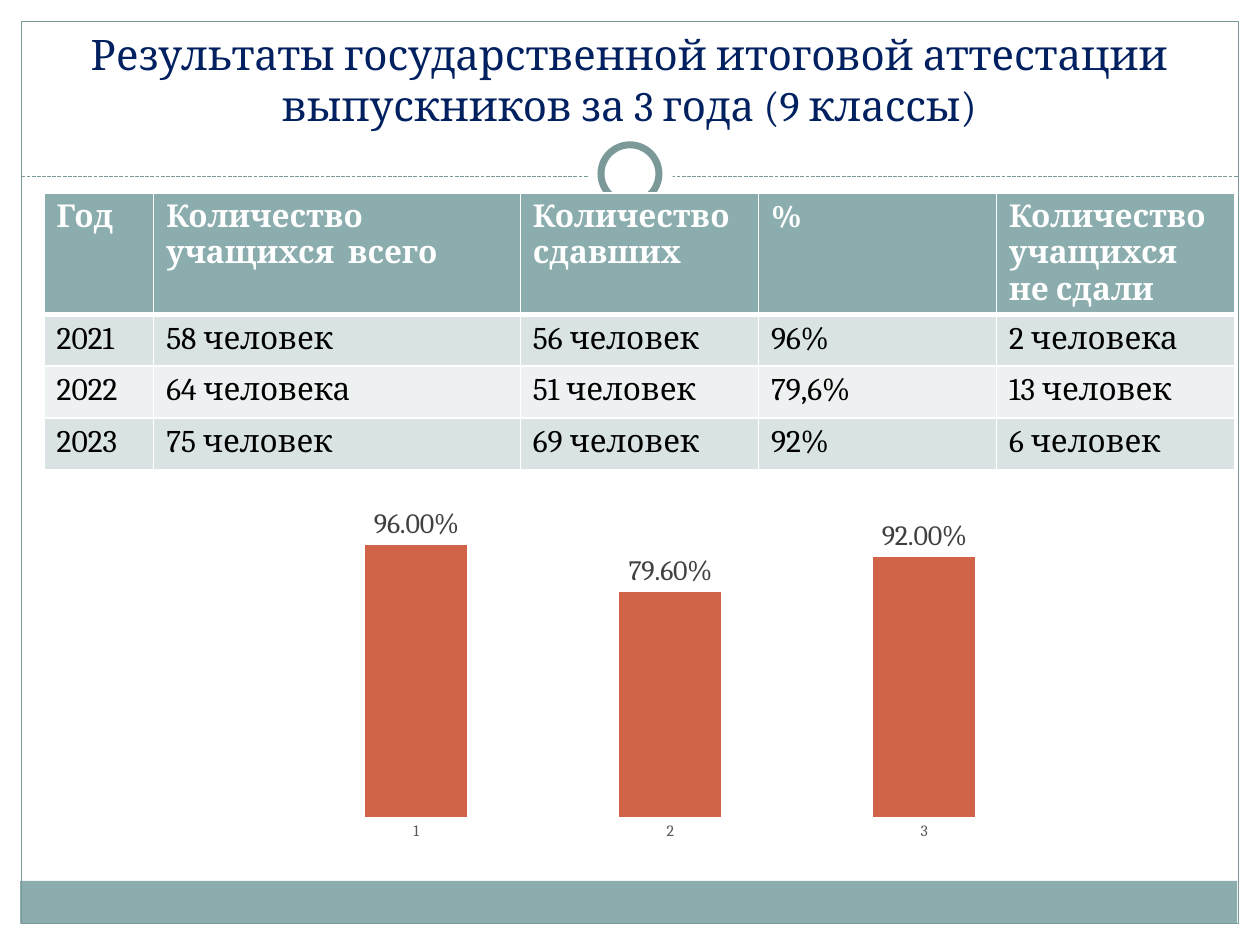
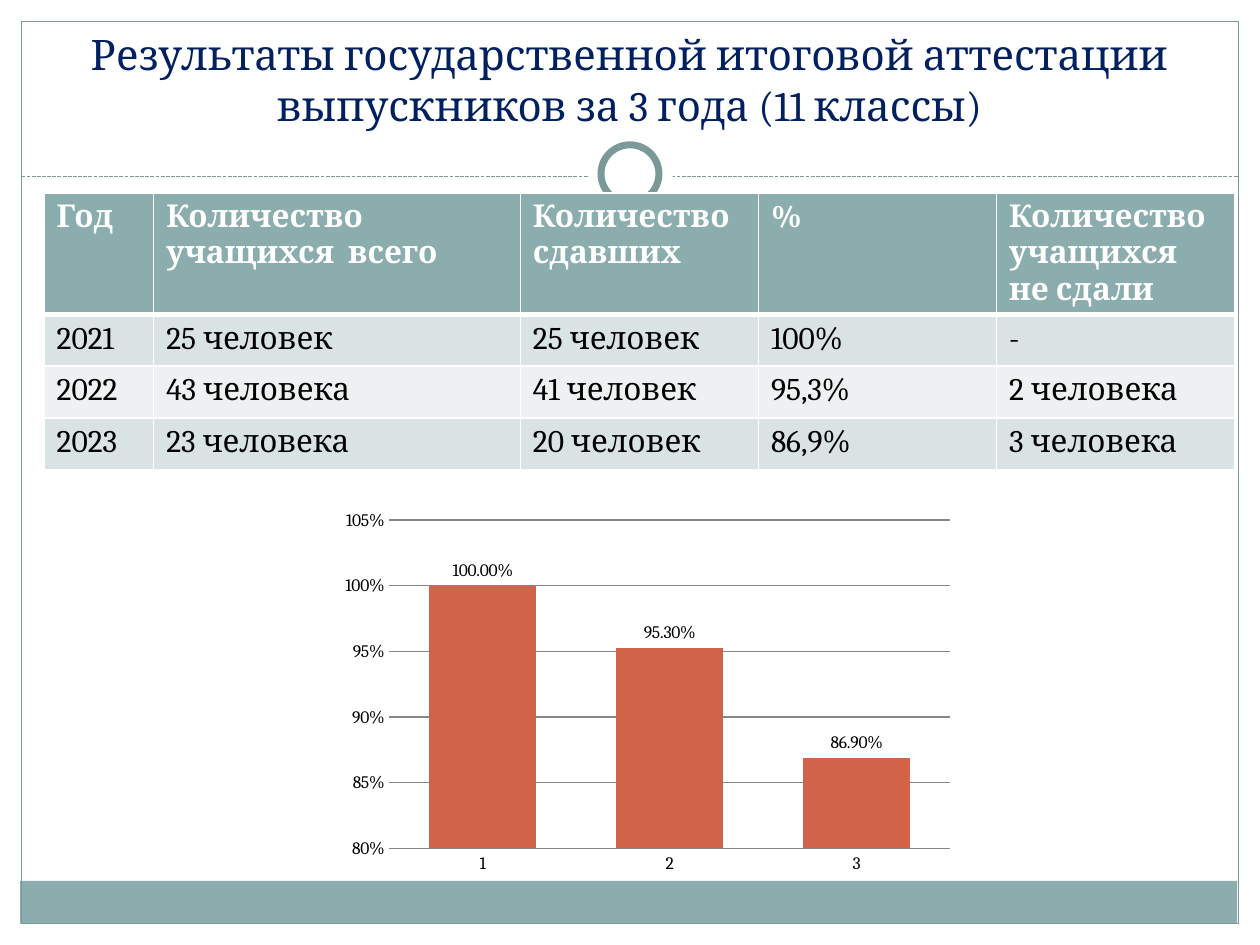
from lxml.etree import SubElement
from pptx import Presentation
from pptx.chart.data import CategoryChartData
from pptx.dml.color import RGBColor
from pptx.enum.chart import XL_CHART_TYPE, XL_LABEL_POSITION, XL_TICK_MARK
from pptx.enum.dml import MSO_LINE
from pptx.enum.shapes import MSO_CONNECTOR, MSO_SHAPE
from pptx.enum.text import MSO_ANCHOR, MSO_AUTO_SIZE, PP_ALIGN
from pptx.oxml import parse_xml
from pptx.oxml.ns import nsdecls, qn
from pptx.util import Inches, Pt

FONT = "Cambria"
WHITE, BLACK, NAVY = "FFFFFF", "000000", "002060"
TEAL, DARK_TEAL, BAR = "8CADAE", "7C999A", "D16349"
BODY_FILLS = ["DAE3E3", "EEF1F2"]
HEADER = ["Год", "Количество учащихся  всего", "Количество сдавших", "%", "Количество учащихся не сдали"]
COLUMN_SHARES = [8.7, 29.1, 18.9, 18.9, 18.9]
ROW_SHARES = [12.8, 5.47, 5.47, 5.47]

REPORTS = [
    {
        "classes": 9,
        "rows": [
            ["2021", "58 человек", "56 человек", "96%", "2 человека"],
            ["2022", "64 человека", "51 человек", "79,6%", "13 человек"],
            ["2023", "75 человек", "69 человек", "92%", "6 человек"],
        ],
        "rates": [0.96, 0.796, 0.92],
        "chart_box": (21.7, 49.73, 63, 40),
        "scale": (0, 1.2, 0.2),
        "gap": 150, "overlap": 0, "axis": False,
        "label_size": 16, "label_color": "404040",
        "category_size": 9, "category_color": "595959",
    },
    {
        "classes": 11,
        "rows": [
            ["2021", "25 человек", "25 человек", "100%", "-"],
            ["2022", "43 человека", "41 человек", "95,3%", "2 человека"],
            ["2023", "23 человека", "20 человек", "86,9%", "3 человека"],
        ],
        "rates": [1, 0.953, 0.869],
        "chart_box": (26.4, 53.2, 50, 40),
        "scale": (0.8, 1.05, 0.05),
        "gap": 75, "overlap": -25, "axis": True,
        "label_size": 10, "label_color": BLACK,
        "category_size": 10, "category_color": BLACK,
    },
]

presentation = Presentation()
presentation.slide_width = Inches(10)
presentation.slide_height = Inches(7.5)


def color(value):
    return RGBColor.from_string(value)


def share(*percents):
    sides = (presentation.slide_width, presentation.slide_height)
    return [round(sides[index % 2] * percent / 100) for index, percent in enumerate(percents)]


layout = presentation.slide_layouts[5]
slides = [presentation.slides.add_slide(layout) for report in REPORTS]

divider = slides[0].shapes.add_connector(MSO_CONNECTOR.STRAIGHT, *share(1.7, 18.67, 98.3, 18.67))
divider.line.color.rgb = color(DARK_TEAL)
divider.line.width = Pt(0.75)
divider.line.dash_style = MSO_LINE.SQUARE_DOT
SubElement(divider.element.spPr, qn("a:effectLst"))
decorations = [divider]

for kind, box, fill, line_width in [
    (MSO_SHAPE.RECTANGLE, (1.6, 93.2, 96.6, 4.53), TEAL, 0),
    (MSO_SHAPE.RECTANGLE, (1.7, 2.27, 96.6, 95.47), None, 0.75),
    (MSO_SHAPE.OVAL, (46.7, 14, 6.7, 8.93), WHITE, 0),
    (MSO_SHAPE.OVAL, (47.7, 15.33, 4.6, 6.13), WHITE, 4),
]:
    shape = slides[0].shapes.add_shape(kind, *share(*box))
    shape.shadow.inherit = False
    if fill:
        shape.fill.solid()
        shape.fill.fore_color.rgb = color(fill)
    else:
        shape.fill.background()
    if line_width:
        shape.line.color.rgb = color(DARK_TEAL)
        shape.line.width = Pt(line_width)
    else:
        shape.line.fill.background()
    decorations.append(shape)

for number, shape in enumerate(decorations, 101):
    shape.element.xpath(".//p:cNvPr")[0].set("id", str(number))
    layout.shapes.element.append(shape.element)

for slide, report in zip(slides, REPORTS):
    title = slide.shapes.title
    title.left, title.top, title.width, title.height = share(3.3, 3.33, 93.3, 11.07)
    title.text_frame.text = (
        f"Результаты государственной итоговой аттестации выпускников за 3 года ({report['classes']} классы)"
    )
    title.text_frame.auto_size = MSO_AUTO_SIZE.NONE
    title.text_frame.vertical_anchor = MSO_ANCHOR.BOTTOM
    paragraph = title.text_frame.paragraphs[0]
    paragraph.alignment = PP_ALIGN.CENTER
    font = paragraph.runs[0].font
    font.name, font.size = FONT, Pt(24)
    font.color.rgb = color(NAVY)

    rows = [HEADER] + report["rows"]
    table_box = share(3.5, 20.4, sum(COLUMN_SHARES), sum(ROW_SHARES))
    table = slide.shapes.add_table(len(rows), len(HEADER), *table_box).table
    for column, width in zip(table.columns, COLUMN_SHARES):
        column.width = share(width)[0]
    for row, height in zip(table.rows, ROW_SHARES):
        row.height = share(0, height)[1]
    for row_index, values in enumerate(rows):
        is_header = row_index == 0
        for column_index, value in enumerate(values):
            cell = table.cell(row_index, column_index)
            cell.text_frame.text = value
            font = cell.text_frame.paragraphs[0].runs[0].font
            font.name, font.size, font.bold = FONT, Pt(18), is_header
            font.color.rgb = color(WHITE if is_header else BLACK)
            cell.fill.solid()
            cell.fill.fore_color.rgb = color(TEAL if is_header else BODY_FILLS[(row_index - 1) % 2])
            properties = cell._tc.get_or_add_tcPr()
            for position, side in enumerate("LRTB"):
                under_header = (row_index, side) in [(0, "B"), (1, "T")]
                properties.insert(position, parse_xml(
                    f'<a:ln{side} {nsdecls("a")} w="{Pt(3 if under_header else 1)}">'
                    f'<a:solidFill><a:srgbClr val="{WHITE}"/></a:solidFill></a:ln{side}>'
                ))

    chart_data = CategoryChartData(number_format="0.00%")
    chart_data.categories = ["1", "2", "3"]
    chart_data.add_series("Series 1", report["rates"])
    chart = slide.shapes.add_chart(
        XL_CHART_TYPE.COLUMN_CLUSTERED, *share(*report["chart_box"]), chart_data
    ).chart
    chart.has_legend = False
    chart.has_title = False
    chart.font.name, chart.font.size = FONT, Pt(10)
    chart.font.color.rgb = color(BLACK)

    plot = chart.plots[0]
    plot.vary_by_categories = False
    plot.gap_width, plot.overlap = report["gap"], report["overlap"]
    series = plot.series[0]
    series.format.fill.solid()
    series.format.fill.fore_color.rgb = color(BAR)
    labels = series.data_labels
    labels.show_value = True
    labels.position = XL_LABEL_POSITION.OUTSIDE_END
    labels.number_format, labels.number_format_is_linked = "0.00%", False
    labels.font.name, labels.font.size = FONT, Pt(report["label_size"])
    labels.font.color.rgb = color(report["label_color"])

    category_axis, value_axis = chart.category_axis, chart.value_axis
    category_axis.major_tick_mark = XL_TICK_MARK.NONE
    category_font = category_axis.tick_labels.font
    category_font.name, category_font.size = FONT, Pt(report["category_size"])
    category_font.color.rgb = color(report["category_color"])
    value_axis.minimum_scale, value_axis.maximum_scale, value_axis.major_unit = report["scale"]
    value_axis.major_tick_mark = XL_TICK_MARK.NONE
    value_axis.format.line.fill.background()
    value_axis.visible = value_axis.has_major_gridlines = report["axis"]
    if report["axis"]:
        value_axis.tick_labels.number_format = "0%"
        value_axis.tick_labels.number_format_is_linked = False
        for line in (category_axis.format.line, value_axis.major_gridlines.format.line):
            line.color.rgb = color("868686")
            line.width = Pt(0.75)
    else:
        category_axis.format.line.fill.background()

presentation.save("out.pptx")
